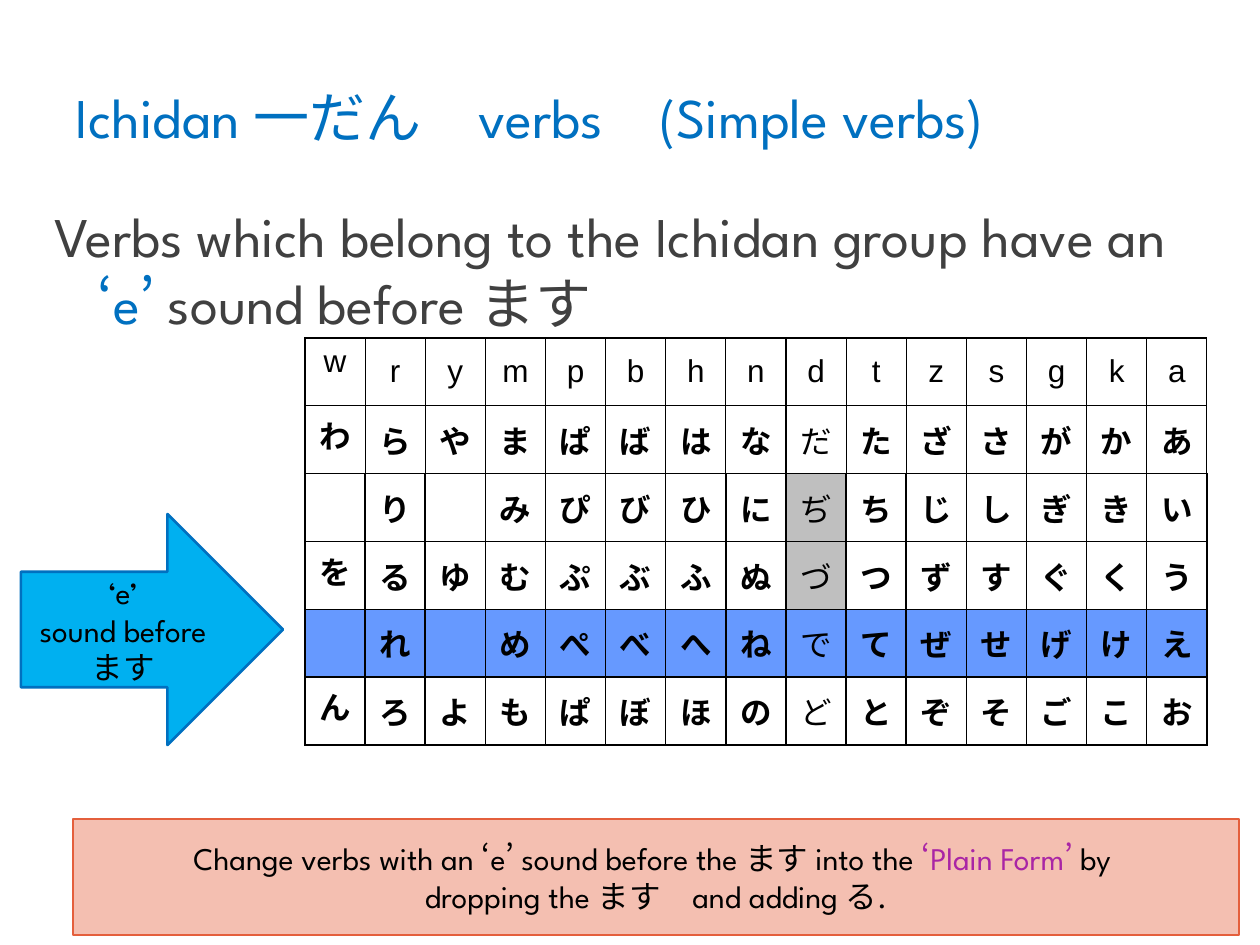
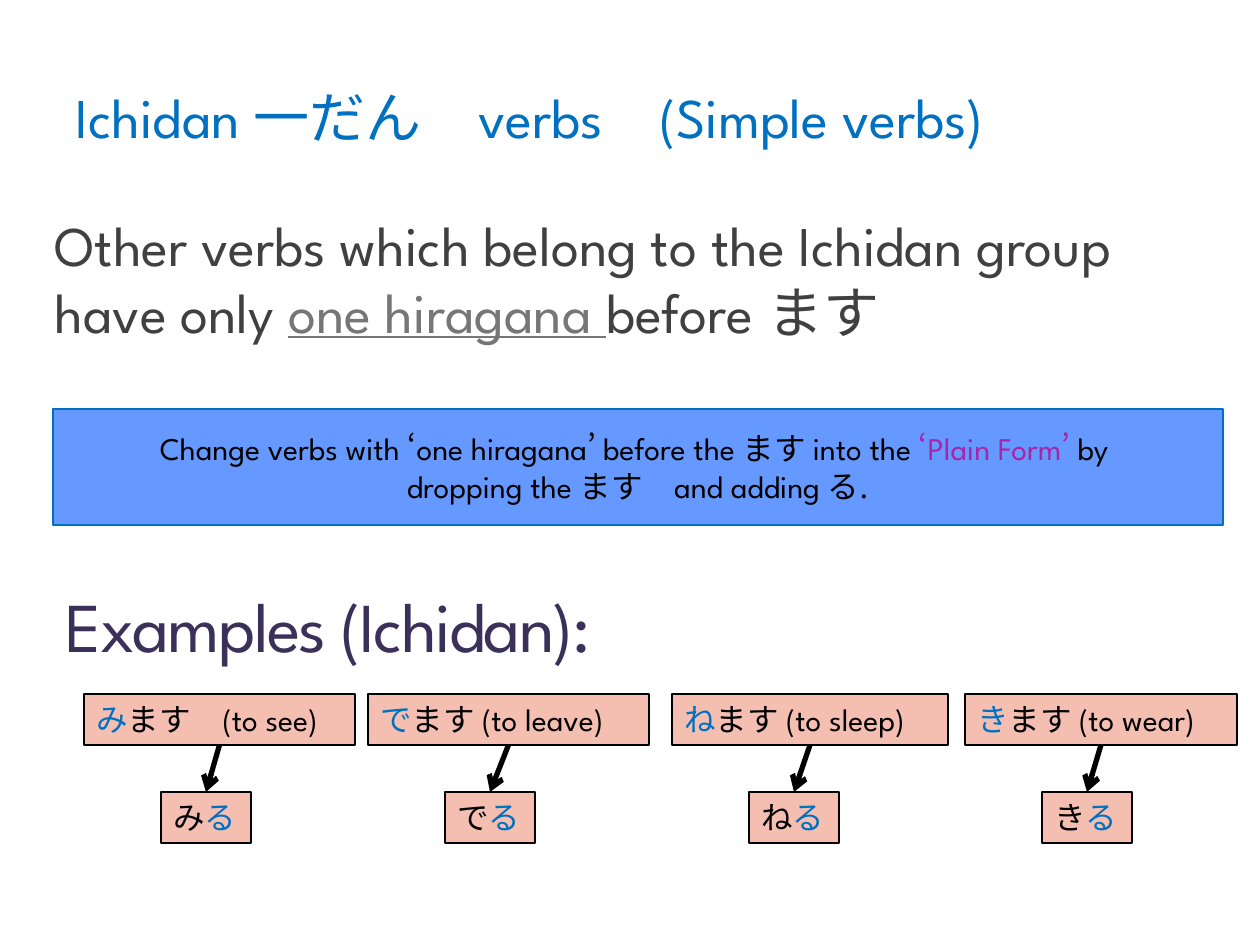
import pptx
import pptx.util
import pptx.dml.color
import pptx.enum.dml
import pptx.enum.lang
import pptx.enum.shapes
import pptx.enum.text
import pptx.oxml
import pptx.oxml.ns
from lxml import etree

SCALE = 914400 / 126
FONT = "League Spartan"
BLACK, WHITE, BLUE, GRAY = "000000", "FFFFFF", "0070C0", "404040"
SKY, PINK, PURPLE = "6699FF", "F4BFB1", "A925A5"
KANA = [
    "wrympbhndtzsgka",
    "わらやまぱばはなだたざさがかあ",
    " り みぴびひにぢちじしぎきい",
    "をるゆむぷぶふぬづつずすぐくう",
    " れ めぺべへねでてぜせげけえ",
    "んろよもぱぼほのどとぞそごこお",
]
VERBS = [  # left edge, width, stem, ending with meaning
    (84, 271, "み", "ます\u3000(to see)"),
    (368, 281, "で", "ます (to leave)"),
    (672, 276, "ね", "ます (to sleep)"),
    (965, 272, "き", "ます (to wear)"),
]
SHAPE = pptx.enum.shapes.MSO_SHAPE
ALIGN = pptx.enum.text.PP_ALIGN
ANCHOR = pptx.enum.text.MSO_ANCHOR


def px(n):
    return round(n * SCALE)


def place(box):
    return [px(n) for n in box]


def rgb(code):
    return pptx.dml.color.RGBColor.from_string(code)


def write(par, runs, size, align=ALIGN.LEFT, font=FONT, bold=False):
    """Fill a paragraph with (text, colour) runs of one font."""
    par.alignment = align
    par.font.name, par.font.size, par.font.bold = font, pptx.util.Pt(size), bold
    tints = {tint for _, tint in runs}
    mixed = len(tints) > 1
    if not mixed:
        par.font.color.rgb = rgb(tints.pop())
    for text, tint in runs:
        run = par.add_run()
        run.text = text
        run.font.language_id = pptx.enum.lang.MSO_LANGUAGE_ID.JAPANESE
        if mixed:
            run.font.color.rgb = rgb(tint)


def fill_frame(frame, lines, size, align=ALIGN.LEFT, anchor=ANCHOR.MIDDLE):
    frame.word_wrap = True
    frame.vertical_anchor = anchor
    for i, runs in enumerate(lines):
        par = frame.add_paragraph() if i else frame.paragraphs[0]
        write(par, runs, size, align)


def add_title(slide):
    title = slide.shapes.title
    title.left, title.top, title.width, title.height = place((63, 38, 1166, 157))
    fill_frame(title.text_frame,
               [[("Ichidan 一だん\u3000verbs\u3000(Simple verbs)", BLUE)]], 32)


def add_text(slide, box, runs, size, anchor=ANCHOR.TOP):
    shape = slide.shapes.add_textbox(*place(box))
    fill_frame(shape.text_frame, [runs], size, anchor=anchor)
    return shape.text_frame.paragraphs[0]


def add_block(slide, box, lines, fill, edge, weight=None, kind=SHAPE.RECTANGLE,
              align=ALIGN.CENTER, anchor=ANCHOR.MIDDLE):
    """Filled shape with text; without a weight its outline is a hairline."""
    shape = slide.shapes.add_shape(kind, *place(box))
    shape.shadow.inherit = False
    shape.fill.solid()
    shape.fill.fore_color.rgb = rgb(fill)
    shape.line.color.rgb = rgb(edge)
    shape.line.width = pptx.util.Pt(weight or 0)
    fill_frame(shape.text_frame, lines, 18, align, anchor)
    return shape


def add_rule(slide, box, subject, fill, edge):
    add_block(slide, box, [
        [(f"Change verbs {subject} before the ます into the ", BLACK),
         ("‘Plain Form’ ", PURPLE), ("by ", BLACK)],
        [("dropping the ます\u3000and adding る.", BLACK)],
    ], fill, edge)


def set_border(cell, weight):
    props = cell._tc.get_or_add_tcPr()
    space = pptx.oxml.ns.nsdecls("a")
    width = pptx.util.Pt(weight)
    for i, side in enumerate("LRTB"):
        props.insert(i, pptx.oxml.parse_xml(
            f'<a:ln{side} {space} w="{width}"><a:solidFill>'
            f'<a:srgbClr val="{BLACK}"/></a:solidFill></a:ln{side}>'))


def add_kana(slide, box):
    count = len(KANA[0])
    table = slide.shapes.add_table(len(KANA), count, *place(box)).table
    dcol = KANA[0].index("d")
    for col in table.columns:
        col.width = px(box[2] / count)
    for r, signs in enumerate(KANA):
        table.rows[r].height = px(box[3] / len(KANA))
        for c, sign in enumerate(signs):
            cell = table.cell(r, c)
            cell.fill.solid()
            fill = SKY if r == 4 else "BFBFBF" if c == dcol and r in (2, 3) else WHITE
            cell.fill.fore_color.rgb = rgb(fill)
            cell.vertical_anchor = ANCHOR.MIDDLE if c else ANCHOR.TOP
            set_border(cell, 0.75 if r < 2 else 1)
            if sign != " ":
                plain = r == 0 or c == dcol
                write(cell.text_frame.paragraphs[0], [(sign, BLACK)], 18, ALIGN.CENTER,
                      "Arial" if plain else "Comic Neue", not plain)


def add_arrow(slide, start, end):
    """Arrow from the bottom of one box to the top of another."""
    line = slide.shapes.add_connector(pptx.enum.shapes.MSO_CONNECTOR.STRAIGHT, 0, 0, 0, 0)
    line.begin_connect(start, 2)
    line.end_connect(end, 0)
    line.line.color.rgb = rgb(BLACK)
    line.line.width = pptx.util.Pt(3)
    qn = pptx.oxml.ns.qn
    etree.SubElement(line.line._get_or_add_ln(), qn("a:tailEnd"), type="arrow")
    etree.SubElement(line._element.spPr, qn("a:effectLst"))


def add_verb(slide, left, top, width, stem, rest):
    def card(box, runs):
        return add_block(slide, box, [runs], PINK, BLACK,
                         align=ALIGN.LEFT, anchor=ANCHOR.TOP)

    polite = card((left, top, width, 51), [(stem, BLUE), (rest, BLACK)])
    plain = card((left + 77, top + 98, 90, 51), [(stem, BLACK), ("る", BLUE)])
    add_arrow(slide, polite, plain)


def build_sound(slide):
    add_title(slide)
    body = add_text(slide, (42, 195, 1166, 143), [
        ("Verbs which belong to the Ichidan group have an ", GRAY),
        ("‘e’ ", BLUE), ("sound before ます", GRAY)], 32)
    hang = px(43)
    props = body._p.get_or_add_pPr()
    props.set("marL", str(hang))
    props.set("indent", str(-hang))
    add_block(slide, (21, 514, 262, 231),
              [[(line, BLACK)] for line in ("‘e’", "sound before", "ます")],
              "00B0F0", BLUE, 1.5, SHAPE.RIGHT_ARROW)
    add_kana(slide, (305, 338, 902, 407))
    add_rule(slide, (73, 819, 1166, 116), "with an ‘e’ sound", PINK, "E45F3C")


def build_single(slide):
    add_title(slide)
    body = add_text(slide, (42, 204, 1207, 150), [
        ("Other verbs which belong to the Ichidan group have only ", GRAY),
        ("one hiragana ", "767676"), ("before ます", GRAY)], 32)
    body.runs[1].font.underline = True
    add_rule(slide, (53, 409, 1170, 116), "with ‘one hiragana’", SKY, BLUE)
    head = add_text(slide, (53, 557, 1134, 136),
                    [("Examples (Ichidan):", "3B3059")], 40, ANCHOR.MIDDLE)
    head.runs[0]._r.get_or_add_rPr().set("spc", "-100")
    for left, width, stem, rest in VERBS:
        add_verb(slide, left, 694, width, stem, rest)


def main():
    deck = pptx.Presentation()
    deck.slide_width, deck.slide_height = px(1260), px(945)
    for build in (build_sound, build_single):
        build(deck.slides.add_slide(deck.slide_layouts[5]))
    deck.save("out.pptx")


if __name__ == "__main__":
    main()
